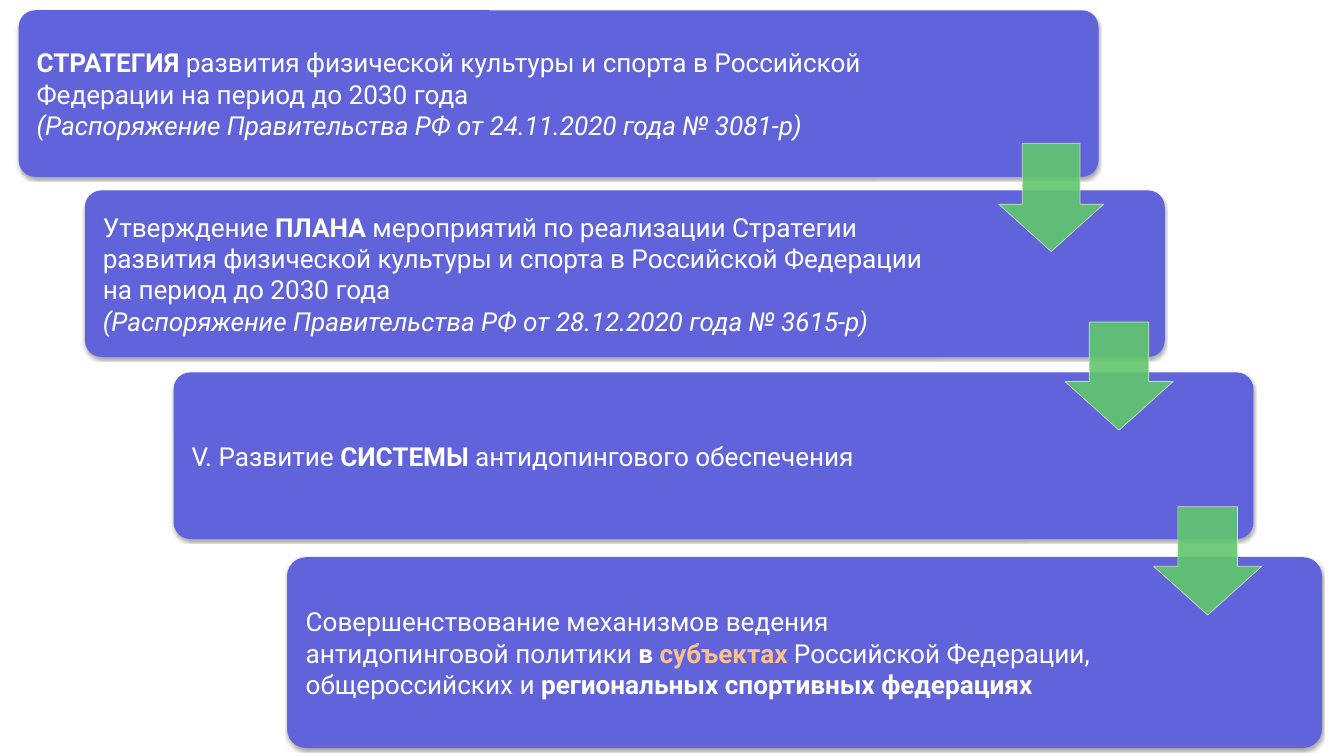
from lxml.etree import SubElement
from pptx import Presentation
from pptx.dml.color import RGBColor
from pptx.enum.shapes import MSO_SHAPE
from pptx.enum.text import MSO_ANCHOR, PP_ALIGN
from pptx.oxml.ns import qn
from pptx.util import Pt

THEME = {
    "font": "Roboto", "size": 28,
    "card": "6063DA", "text": "FFFFFF", "accent": "FAC090",
    "arrow": "61C76D", "edge": "DEE7D1", "shadow": "000000",
}

CARDS = [
    {"box": (20, 11, 1157, 178.5), "right": 211, "arrow": (112.5, 116, 36),
     "text": [
         [("СТРАТЕГИЯ", "b"),
          (" развития физической культуры и спорта в Российской Федерации на период до 2030 года", "")],
         [("(Распоряжение Правительства РФ от 24.11.2020 года № 3081-р)", "i")]]},
    {"box": (91, 204, 1157, 178.5), "right": 227, "arrow": (116, 116, 37.5),
     "text": [
         [("Утверждение ", ""), ("ПЛАНА", "b"),
          (" мероприятий по реализации Стратегии развития физической культуры и спорта "
           "в Российской Федерации на период до 2030 года", "")],
         [("(Распоряжение Правительства РФ от 28.12.2020 года № 3615-р)", "i")]]},
    {"box": (186, 399, 1157, 178.5), "right": 225, "arrow": (116, 116, 34.5),
     "text": [
         [("V. Развитие ", ""), ("СИСТЕМЫ", "b"), (" антидопингового обеспечения", "")]]},
    {"box": (307.5, 597, 1109, 204.5), "right": 219, "arrow": None,
     "text": [
         [("Совершенствование механизмов ведения", "")],
         [("антидопинговой политики ", ""), ("в ", "b"), ("субъектах", "ba"),
          (" Российской Федерации, общероссийских и ", ""),
          ("региональных спортивных федерациях", "b")]]},
]
INSET = 14
ARROW_BACK = 107


def rgb(name):
    return RGBColor.from_string(THEME[name])


def fade(color, percent):
    SubElement(color, qn("a:alpha"), val=str(percent * 1000))


def add_shape(slide, kind, box, fill, adjust):
    shape = slide.shapes.add_shape(kind, *map(Pt, box))
    for i, value in enumerate(adjust):
        shape.adjustments[i] = value
    shape.fill.solid()
    shape.fill.fore_color.rgb = rgb(fill)
    shape.shadow.inherit = False
    return shape


def add_shadow(shape):
    effects = shape.element.spPr.find(qn("a:effectLst"))
    outer = SubElement(effects, qn("a:outerShdw"), blurRad=str(Pt(3.1)),
                       dist=str(Pt(1.8)), dir="5400000", rotWithShape="0")
    fade(SubElement(outer, qn("a:srgbClr"), val=THEME["shadow"]), 35)


def add_text(shape, lines, right):
    frame = shape.text_frame
    frame.word_wrap = True
    frame.vertical_anchor = MSO_ANCHOR.MIDDLE
    frame.margin_left, frame.margin_right = Pt(INSET), Pt(right)
    frame.margin_top = frame.margin_bottom = Pt(INSET)
    for i, line in enumerate(lines):
        para = frame.add_paragraph() if i else frame.paragraphs[0]
        para.alignment = PP_ALIGN.LEFT
        for words, style in line:
            run = para.add_run()
            run.text = words
            font = run.font
            font.name, font.size = THEME["font"], Pt(THEME["size"])
            font.bold, font.italic = "b" in style, "i" in style
            font.color.rgb = rgb("accent" if "a" in style else "text")


def add_card(slide, card):
    shape = add_shape(slide, MSO_SHAPE.ROUNDED_RECTANGLE, card["box"], "card", [0.1])
    shape.line.fill.background()
    add_shadow(shape)
    add_text(shape, card["text"], card["right"])


def add_arrow(slide, card):
    left, top, width, height = card["box"]
    wide, high, lap = card["arrow"]
    box = (left + width - ARROW_BACK, top + height - lap, wide, high)
    shape = add_shape(slide, MSO_SHAPE.DOWN_ARROW, box, "arrow", [0.55, 0.45])
    shape.line.color.rgb = rgb("edge")
    shape.line.width = Pt(0.75)
    for color in shape.element.spPr.iter(qn("a:srgbClr")):
        fade(color, 90)


def main():
    deck = Presentation()
    deck.slide_width, deck.slide_height = Pt(1440), Pt(810)
    slide = deck.slides.add_slide(deck.slide_layouts[6])
    for card in CARDS:
        add_card(slide, card)
    for card in CARDS:
        if card["arrow"]:
            add_arrow(slide, card)
    deck.save("out.pptx")


if __name__ == "__main__":
    main()
